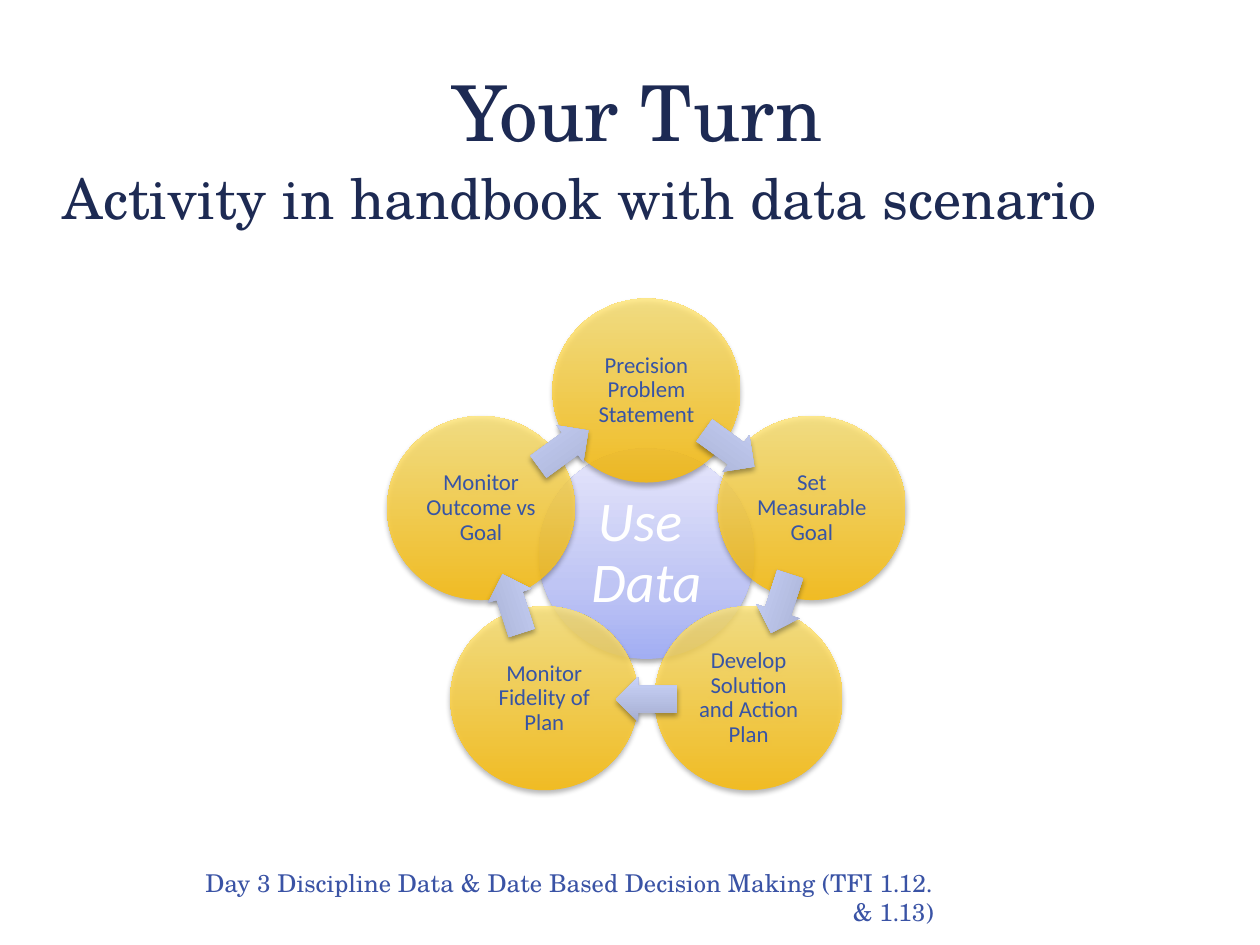
from math import cos, radians, sin

from pptx import Presentation
from pptx.dml.color import RGBColor
from pptx.enum.shapes import MSO_SHAPE
from pptx.enum.text import MSO_ANCHOR, PP_ALIGN
from pptx.oxml import parse_xml
from pptx.oxml.ns import nsdecls
from pptx.util import Inches, Pt

NAVY = RGBColor(0x1D, 0x2A, 0x53)
FOOTER_BLUE = RGBColor(0x3A, 0x53, 0xA5)
LABEL_BLUE = RGBColor(0x37, 0x54, 0xA5)
WHITE = RGBColor(0xFF, 0xFF, 0xFF)
# Gradient stops: position in percent, colour
LILAC = [(0, RGBColor(0xA2, 0xAE, 0xF3)), (35, RGBColor(0xBF, 0xC5, 0xF4)),
         (100, RGBColor(0xE6, 0xE6, 0xFB))]
GOLD = [(0, RGBColor(0xFF, 0xBD, 0x00)), (100, RGBColor(0xFF, 0xE5, 0x75))]
STEEL = [(0, RGBColor(0xA7, 0xAE, 0xD1)), (100, RGBColor(0xC8, 0xD3, 0xF9))]

CENTER_X, CENTER_Y = 5.13, 4.45

prs = Presentation()
prs.slide_width, prs.slide_height = Inches(10), Inches(7.5)
s = prs.slides.add_slide(prs.slide_layouts[6])


def add_cycle_shape(kind, angle, rx, ry, w, h, stops, opacity=100, turn=270):
    """Add a shaded shape at a clockwise angle from the top of the cycle."""
    x = CENTER_X + rx * sin(radians(angle))
    y = CENTER_Y - ry * cos(radians(angle))
    sp = s.shapes.add_shape(kind, Inches(x - w / 2), Inches(y - h / 2),
                            Inches(w), Inches(h))
    sp.line.fill.background()
    sp.shadow.inherit = False
    gs = "".join(f'<a:gs pos="{pos * 1000}"><a:srgbClr val="{color}">'
                 f'<a:alpha val="{opacity * 1000}"/></a:srgbClr></a:gs>'
                 for pos, color in stops)
    spPr = sp.element.spPr
    spPr.insert(2, parse_xml(
        f'<a:gradFill {nsdecls("a")} rotWithShape="1"><a:gsLst>{gs}</a:gsLst>'
        f'<a:lin ang="{turn * 60000}" scaled="0"/></a:gradFill>'))
    spPr[-1].append(parse_xml(
        f'<a:outerShdw {nsdecls("a")} blurRad="{Pt(3.1)}" dist="{Pt(1.8)}" '
        'dir="5400000" rotWithShape="0"><a:srgbClr val="000000">'
        '<a:alpha val="35000"/></a:srgbClr></a:outerShdw>'))
    return sp


def write_text(sp, text, align, spacing=None, anchor=MSO_ANCHOR.TOP, **font):
    tf = sp.text_frame
    tf.word_wrap = True
    tf.vertical_anchor = anchor
    p = tf.paragraphs[0]
    p.text = text
    p.alignment = align
    p.line_spacing = spacing
    color = font.pop("color")
    for r in p.runs:
        r.font.color.rgb = color
        for name, value in font.items():
            setattr(r.font, name, value)
    return tf


# Title, subtitle and footer
for text, box, align, anchor, size, color, top in [
    ("Day 3 Discipline Data & Date Based Decision Making (TFI 1.12. & 1.13)",
     (1.37, 6.53, 6.14, 0.64), PP_ALIGN.RIGHT, MSO_ANCHOR.TOP, 14, FOOTER_BLUE, 0.36),
    ("Activity in handbook with data scenario",
     (0.4, 1.25, 9.03, 4.78), PP_ALIGN.LEFT, MSO_ANCHOR.TOP, 32, NAVY, 0.05),
    ("Your Turn",
     (1.24, 0.38, 7.64, 1), PP_ALIGN.CENTER, MSO_ANCHOR.MIDDLE, 44, NAVY, 0.05),
]:
    tb = s.shapes.add_textbox(*map(Inches, box))
    tf = write_text(tb, text, align, anchor=anchor, size=Pt(size),
                    name="TeX Gyre Schola", color=color)
    tf.margin_top = Inches(top)

# Hub and the five steps around it
hub = add_cycle_shape(MSO_SHAPE.OVAL, 180, 0, 0, 1.71, 1.67, LILAC)
hub.top = Inches(3.56)
circles = [(hub, "Use \vData", dict(size=Pt(32), italic=True, color=WHITE))]
steps = ["Precision Problem Statement", "Set Measurable Goal",
         "Develop Solution and Action Plan", "Monitor Fidelity of Plan",
         "Monitor Outcome vs Goal"]
for i, step in enumerate(steps):
    sp = add_cycle_shape(MSO_SHAPE.OVAL, i * 72, 1.38, 1.35, 1.49, 1.46, GOLD, 80)
    circles.append((sp, step, dict(size=Pt(13), color=LABEL_BLUE)))
for sp, text, font in circles:
    tf = write_text(sp, text, PP_ALIGN.CENTER, 0.9, MSO_ANCHOR.MIDDLE,
                    name="Calibri", **font)
    for side in ("left", "top", "right", "bottom"):
        setattr(tf, f"margin_{side}", Inches(0.08))

# Arrows between neighbouring steps, lit from above whichever way they point
for i in range(len(steps)):
    angle = 36 + i * 72
    turn = 90 if 90 < angle < 270 else 270
    arrow = add_cycle_shape(MSO_SHAPE.RIGHT_ARROW, angle, 1.12, 1.1, 0.49, 0.36,
                            STEEL, turn=turn)
    arrow.rotation = angle
    arrow.adjustments[0] = 0.6

prs.save("out.pptx")
